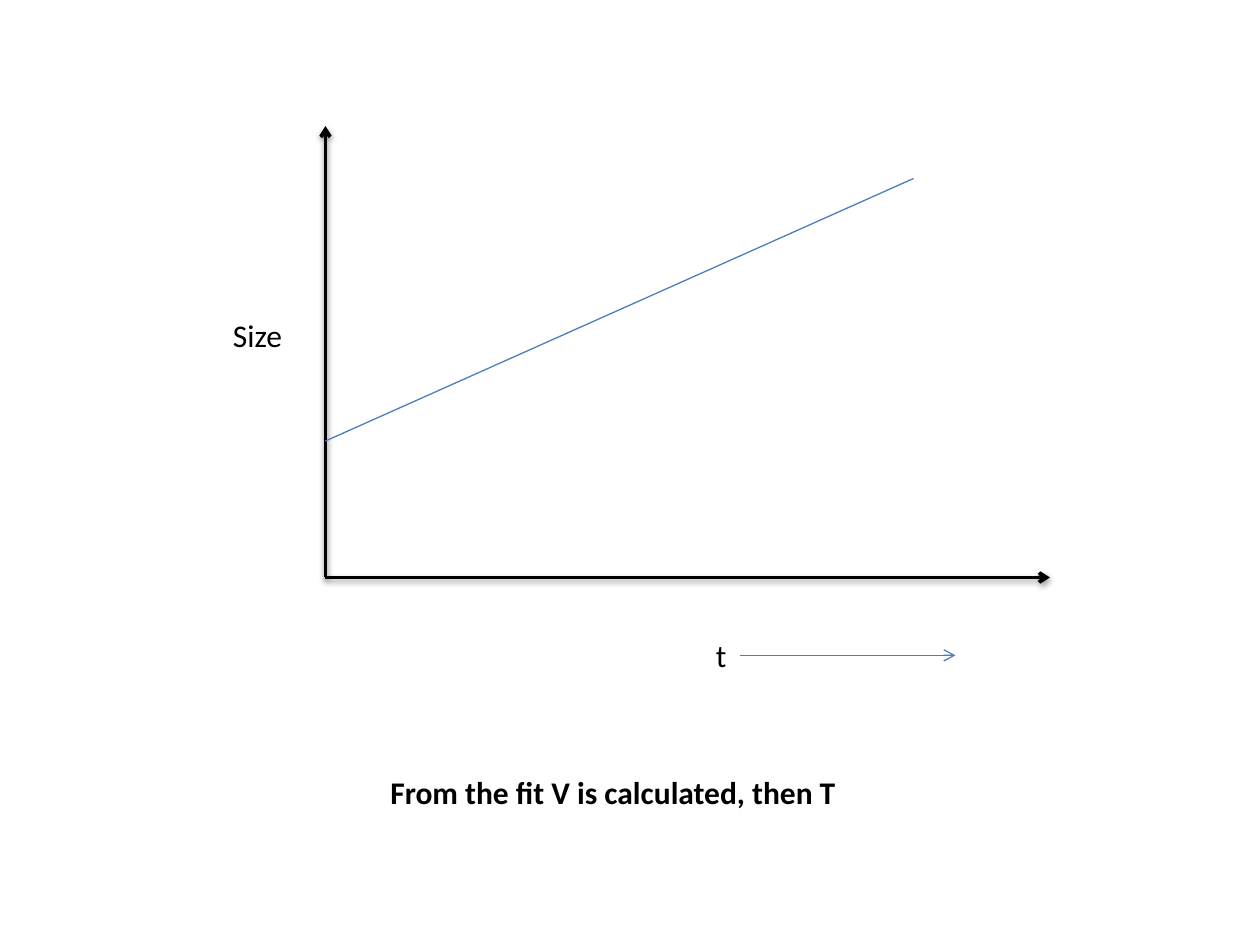
from lxml import etree
from pptx import Presentation
from pptx.dml.color import RGBColor
from pptx.enum.shapes import MSO_CONNECTOR
from pptx.enum.text import MSO_AUTO_SIZE
from pptx.oxml.ns import qn
from pptx.util import Pt

STRAIGHT = MSO_CONNECTOR.STRAIGHT
GROW = MSO_AUTO_SIZE.SHAPE_TO_FIT_TEXT
COLORS = {"ink": "000000", "fit": "4B7EBC"}
ORIGIN = (186, 330)


def add_line(s, start, end, color, width, arrow=False, shadow=False):
    """Draw a straight line, with an optional arrowhead and soft shadow."""
    line = s.shapes.add_connector(STRAIGHT, *map(Pt, start + end))
    line.line.color.rgb = RGBColor.from_string(COLORS[color])
    line.line.width = Pt(width)
    if arrow:
        etree.SubElement(line.line._get_or_add_ln(), qn("a:tailEnd"), type="arrow")
    effects = etree.SubElement(line._element.spPr, qn("a:effectLst"))
    if shadow:
        outer = etree.SubElement(
            effects, qn("a:outerShdw"), blurRad=str(Pt(3.1)), dist=str(Pt(1.6)),
            dir="5400000", rotWithShape="0")
        tint = etree.SubElement(outer, qn("a:srgbClr"), val=COLORS["ink"])
        etree.SubElement(tint, qn("a:alpha"), val="38000")
    return line


def add_label(s, text, left, top, width, bold=False):
    """Place a one-line label that fits its text."""
    box = s.shapes.add_textbox(Pt(left), Pt(top), Pt(width), Pt(29))
    tf = box.text_frame
    tf.word_wrap = False
    tf.auto_size = GROW
    r = tf.paragraphs[0].add_run()
    r.text = text
    r.font.name = "Calibri"
    r.font.size = Pt(18)
    r.font.bold = bold
    r.font.color.rgb = RGBColor.from_string(COLORS["ink"])
    return box


def main():
    """Build the size-against-time slide."""
    prs = Presentation()
    prs.slide_width, prs.slide_height = Pt(720), Pt(540)
    s = prs.slides.add_slide(prs.slide_layouts[6])
    for axis_end in ((186, 72), (600, 330)):
        add_line(s, ORIGIN, axis_end, "ink", 2, arrow=True, shadow=True)
    add_line(s, (186, 252), (522, 102), "fit", 0.75)
    add_label(s, "Size", 126, 177, 43)
    time_label = add_label(s, "t", 402, 360, 20.6)
    time_arrow = add_line(s, (422.6, 374.5), (546, 374.5), "fit", 0.75, arrow=True)
    time_arrow.begin_connect(time_label, 3)
    add_label(s, "From the fit V is calculated, then T", 216, 438, 271.5, bold=True)
    prs.save("out.pptx")


if __name__ == "__main__":
    main()
